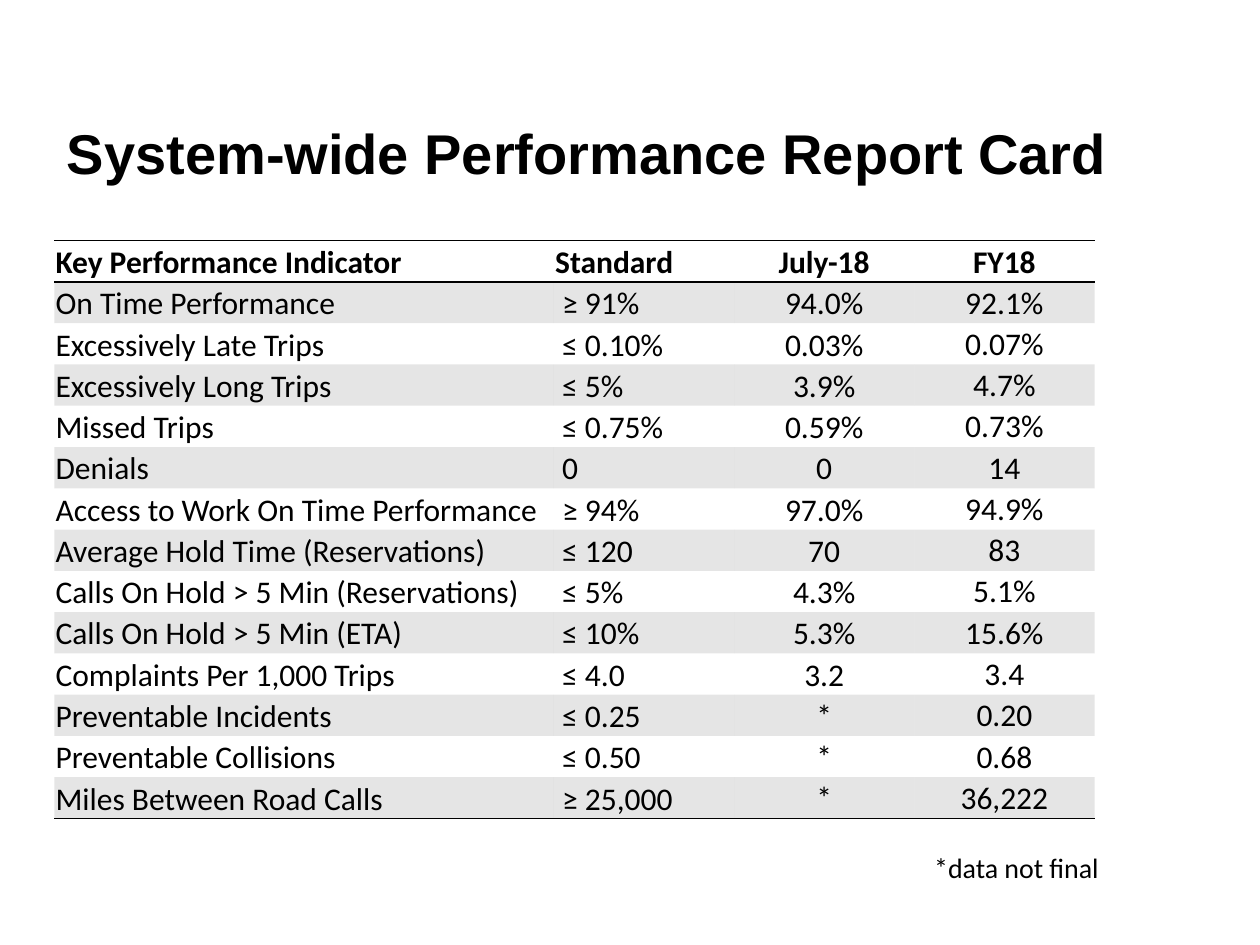
import pptx
import pptx.util
import pptx.dml.color
import pptx.enum.text
import pptx.oxml
import pptx.oxml.ns

Pt = pptx.util.Pt
qn = pptx.oxml.ns.qn
ALIGN = pptx.enum.text.PP_ALIGN
ANCHOR = pptx.enum.text.MSO_ANCHOR

# Content
TITLE = "System-wide Performance Report Card"
FOOTNOTE = "*data not final"
HEADINGS = ("Key Performance Indicator", "Standard", "July-18", "FY18")
INDICATORS = [
    ("On Time Performance", "≥ 91%", "94.0%", "92.1%"),
    ("Excessively Late Trips", "≤ 0.10%", "0.03%", "0.07%"),
    ("Excessively Long Trips", "≤ 5%", "3.9%", "4.7%"),
    ("Missed Trips", "≤ 0.75%", "0.59%", "0.73%"),
    ("Denials", "0", "0", "14"),
    ("Access to Work On Time Performance", "≥ 94%", "97.0%", "94.9%"),
    ("Average Hold Time (Reservations)", "≤ 120", "70", "83"),
    ("Calls On Hold > 5 Min (Reservations)", "≤ 5%", "4.3%", "5.1%"),
    ("Calls On Hold > 5 Min (ETA)", "≤ 10%", "5.3%", "15.6%"),
    ("Complaints Per 1,000 Trips", "≤ 4.0", "3.2", "3.4"),
    ("Preventable Incidents", "≤ 0.25", "*", "0.20"),
    ("Preventable Collisions", "≤ 0.50", "*", "0.68"),
    ("Miles Between Road Calls", "≥ 25,000", "*", "36,222"),
]

# Layout, in points
LEFT, TOP = 31, 137.5
COLUMN_WIDTHS = (285.5, 103, 103, 103)
ROW_HEIGHT = 23.6
CELL_INSET = 0.75
STANDARD_INDENT = 4
BLACK, BAND, BAND_OPACITY = "000000", "808080", 20
NO_STYLE = "{2D5ABB26-0587-4C30-8999-92F81FD0307C}"


def color(hex_code):
    return pptx.dml.color.RGBColor.from_string(hex_code)


def write(frame, text, size, font, bold=False, align=ALIGN.LEFT):
    paragraph = frame.paragraphs[0]
    paragraph.alignment = align
    run = paragraph.add_run()
    run.text = text
    run.font.size = Pt(size)
    run.font.name = font
    run.font.bold = bold
    run.font.color.rgb = color(BLACK)


def add_border(cell, side):
    cell._tc.get_or_add_tcPr().append(pptx.oxml.parse_xml(
        f'<a:ln{side} {pptx.oxml.ns.nsdecls("a")} w="{Pt(1)}"><a:solidFill>'
        f'<a:srgbClr val="{BLACK}"/></a:solidFill></a:ln{side}>'))


def shade(cell):
    cell.fill.solid()
    cell.fill.fore_color.rgb = color(BAND)
    tint = cell._tc.tcPr.find(qn("a:solidFill")).find(qn("a:srgbClr"))
    tint.append(tint.makeelement(qn("a:alpha"),
                                 {"val": str(BAND_OPACITY * 1000)}))


def fill_cell(cell, text, row, column):
    header, last = row == 0, row == len(INDICATORS)
    cell.margin_left = cell.margin_right = cell.margin_top = Pt(CELL_INSET)
    cell.margin_bottom = 0
    if column == 1 and not header:
        cell.margin_left = Pt(CELL_INSET + STANDARD_INDENT)
    middle = (column == 3 and not header) or (column == 2 and last)
    cell.vertical_anchor = ANCHOR.MIDDLE if middle else ANCHOR.BOTTOM
    write(cell.text_frame, text, 18, "Calibri", header,
          ALIGN.CENTER if column >= 2 else ALIGN.LEFT)
    # Borders come before the fill in the cell properties
    if header:
        add_border(cell, "T")
    if header or last:
        add_border(cell, "B")
    if row % 2:
        shade(cell)
    else:
        cell.fill.background()


def main():
    deck = pptx.Presentation()
    deck.slide_width, deck.slide_height = Pt(720), Pt(540)
    slide = deck.slides.add_slide(deck.slide_layouts[5])

    # Title
    title = slide.shapes.title
    title.left, title.top = Pt(LEFT), Pt(64)
    title.width, title.height = Pt(649.5), Pt(46)
    title.text_frame.vertical_anchor = ANCHOR.MIDDLE
    write(title.text_frame, TITLE, 32, "Arial", True)

    # Report card
    rows = [HEADINGS] + INDICATORS
    frame = slide.shapes.add_table(
        len(rows), len(HEADINGS), Pt(LEFT), Pt(TOP),
        Pt(sum(COLUMN_WIDTHS)), Pt(ROW_HEIGHT * len(rows)))
    card = frame.table
    card.first_row = card.horz_banding = False
    card._tbl.tblPr.find(qn("a:tableStyleId")).text = NO_STYLE
    for column, width in zip(card.columns, COLUMN_WIDTHS):
        column.width = Pt(width)
    for r, texts in enumerate(rows):
        card.rows[r].height = Pt(ROW_HEIGHT)
        for c, text in enumerate(texts):
            fill_cell(card.cell(r, c), text, r, c)

    # Footnote
    footnote = slide.shapes.add_textbox(Pt(476), Pt(482.5), Pt(159), Pt(26.5))
    footnote.text_frame.word_wrap = True
    write(footnote.text_frame, FOOTNOTE, 16, "Calibri", align=ALIGN.RIGHT)

    deck.save("out.pptx")


if __name__ == "__main__":
    main()
